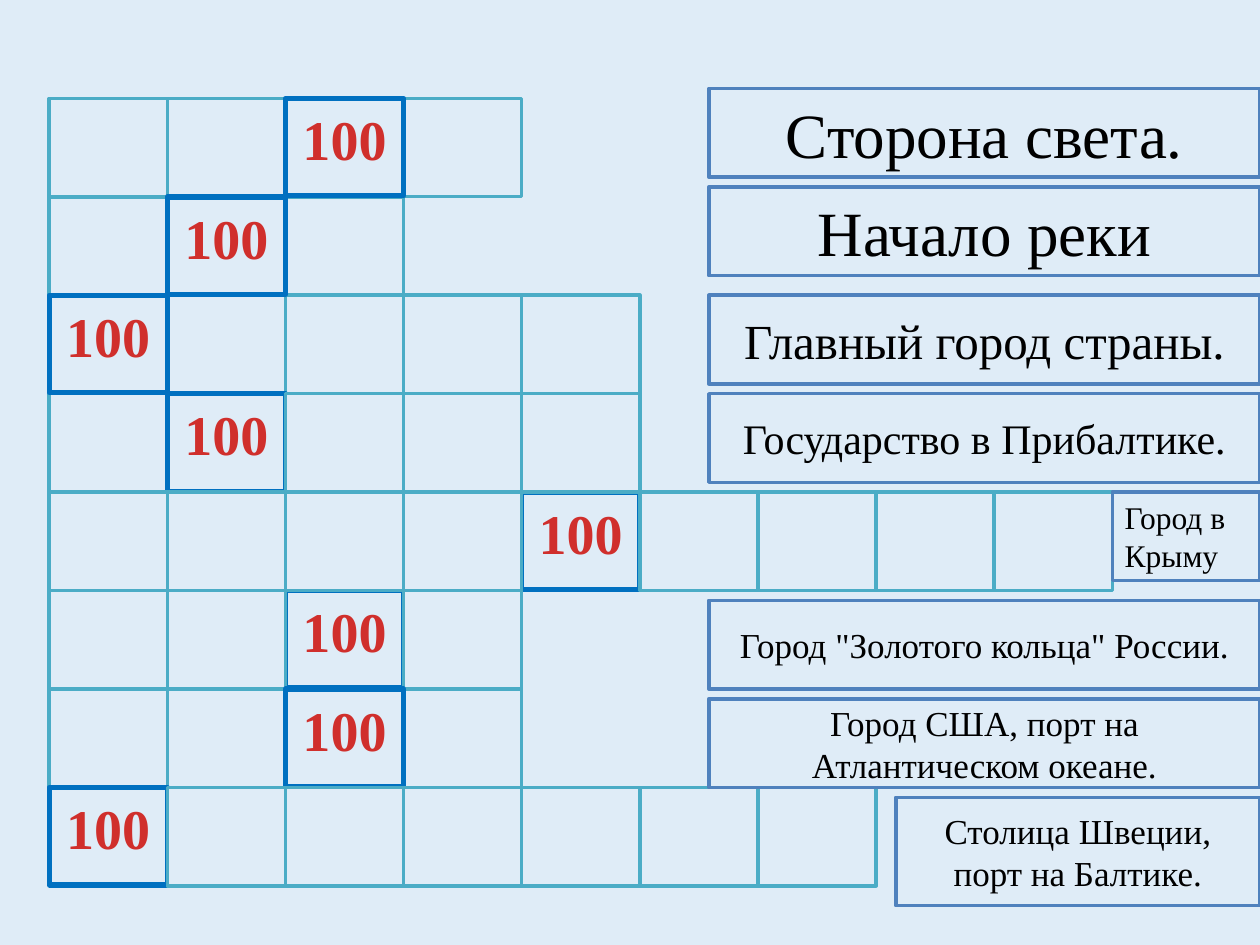
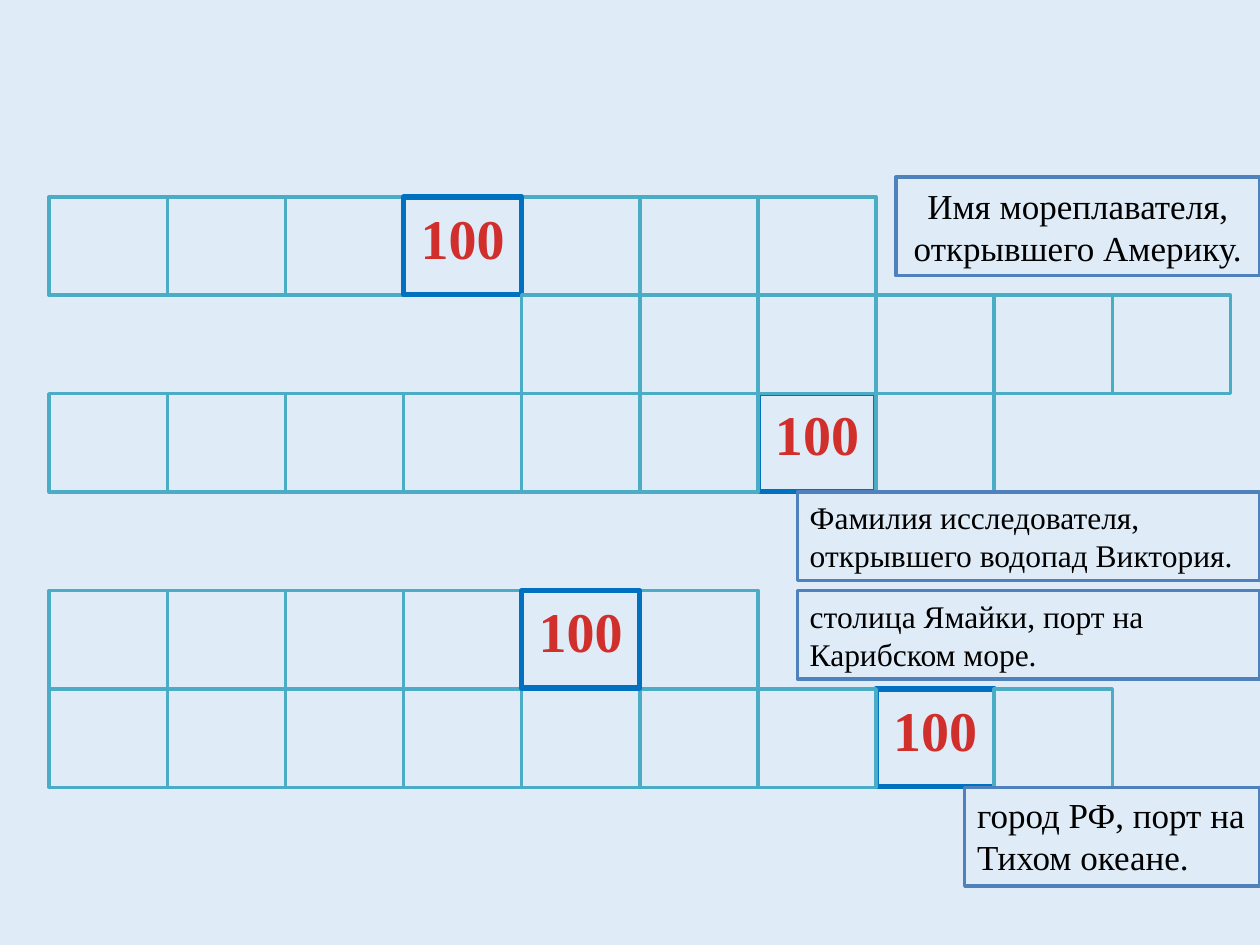
from lxml.etree import SubElement
from pptx import Presentation
from pptx.dml.color import RGBColor
from pptx.enum.shapes import MSO_SHAPE
from pptx.enum.text import MSO_ANCHOR as Anchor, PP_ALIGN as Align
from pptx.oxml.ns import qn
from pptx.util import Inches, Pt

WIDTH, HEIGHT = 10, 7.5
UNIT = WIDTH / 128          # every place and size is a count of units
LEFT, TOP = 5, 10           # corner of the crossword grid
CELL_W, CELL_H, PRIZE_H = 12, 10, 9.9
FONT = "Times New Roman"
PAPER, TEAL, BLUE, FRAME, INK = "DFECF7", "4BACC6", "0070C0", "4F81BD", "000000"
REDS = [(0, "FC7C7A"), (75, "D02F2C"), (100, "C70500")]
PRIZE = "100"

# layers, back to front: (text in the cells, {row: columns})
# clues: (left, top, height, size, centred, text); each runs to the right edge
SLIDES = [
    {
        "layers": [
            ("", {0: [0, 1, 3], 1: [0, 2], 2: [1, 2], 3: [0]}),
            (PRIZE, {0: [2], 1: [1], 2: [0], 3: [1], 4: [4], 5: [2]}),
            ("", {2: [3, 4], 3: [2, 3, 4], 4: [0, 1, 2, 3, 5, 6, 7, 8],
                  5: [0, 1, 3], 6: [0, 1, 3]}),
            (PRIZE, {6: [2], 7: [0]}),
            ("", {7: range(1, 7)}),
        ],
        "clues": [
            (72, 9, 9, 36, True, "Сторона света."),
            (72, 19, 9, 36, True, "Начало реки"),
            (72, 30, 9, 28, True, "Главный город страны."),
            (72, 40, 9, 24, True, "Государство в Прибалтике."),
            (72, 61, 9, 20, True, "Город \"Золотого кольца\" России."),
            (72, 71, 9, 20, True, "Город США, порт на Атлантическом океане."),
            (91, 81, 11, 20, True, "Столица Швеции, порт на Балтике."),
            (113, 50, 9, 18, False, "Город в Крыму"),
        ],
    },
    {
        "layers": [
            ("", {1: [0, 1, 2, 4, 5, 6], 3: [0, 1]}),
            (PRIZE, {1: [3], 6: [7], 3: [6]}),
            ("", {3: [2, 3, 4, 5, 7], 2: range(4, 10), 5: [0, 1, 2, 3, 5],
                  6: [0, 1, 2, 3, 4, 5, 6, 8]}),
            (PRIZE, {5: [4]}),
        ],
        "clues": [
            (91, 18, 10, 20, True, "Имя мореплавателя, открывшего Америку."),
            (81, 50, 9, 18, False,
             "Фамилия исследователя, открывшего водопад Виктория."),
            (81, 60, 9, 18, False, "столица Ямайки, порт на Карибском море."),
            (98, 80, 10, 20, False, "город РФ, порт на Тихом океане."),
        ],
    },
]


def paint(fill, color):
    fill.solid()
    fill.fore_color.rgb = RGBColor.from_string(color)


def add_box(slide, place, line, weight, filled=True):
    box = slide.shapes.add_shape(
        MSO_SHAPE.RECTANGLE, *(Inches(n * UNIT) for n in place))
    box.shadow.inherit = False
    if filled:
        paint(box.fill, PAPER)
    else:
        box.fill.background()
    paint(box.line.fill, line)
    box.line.width = Pt(weight)
    return box


def write(box, text, size, centred, anchor):
    frame = box.text_frame
    frame.text = text
    frame.word_wrap = True
    frame.vertical_anchor = anchor
    para = frame.paragraphs[0]
    para.alignment = Align.CENTER if centred else Align.LEFT
    font = para.runs[0].font
    font.name, font.size = FONT, Pt(size)
    paint(font.fill, INK)
    return para.runs[0]


def shade(run):
    """Give the run a bold vertical gradient of reds."""
    run.font.bold = True
    props = run.font._element
    solid = props.find(qn("a:solidFill"))
    grad = props.makeelement(qn("a:gradFill"))
    props.replace(solid, grad)
    stops = SubElement(grad, qn("a:gsLst"))
    for share, color in REDS:
        stop = SubElement(stops, qn("a:gs"), pos=str(share * 1000))
        SubElement(stop, qn("a:srgbClr"), val=color)
    SubElement(grad, qn("a:lin"), ang=str(90 * 60000))


def add_cell(slide, row, col, text):
    x, y = LEFT + col * CELL_W, TOP + row * CELL_H
    if text:
        box = add_box(slide, (x, y, CELL_W, PRIZE_H), BLUE, 3, filled=False)
        shade(write(box, text, 32, True, Anchor.TOP))
    else:
        add_box(slide, (x, y, CELL_W, CELL_H), TEAL, 2)


def add_clue(slide, left, top, height, size, centred, text):
    place = left, top, WIDTH / UNIT - left, height
    anchor = Anchor.MIDDLE if centred else Anchor.TOP
    write(add_box(slide, place, FRAME, 2), text, size, centred, anchor)


def main():
    deck = Presentation()
    deck.slide_width, deck.slide_height = Inches(WIDTH), Inches(HEIGHT)
    for content in SLIDES:
        slide = deck.slides.add_slide(deck.slide_layouts[6])
        paint(slide.background.fill, PAPER)
        for text, rows in content["layers"]:
            for row, cols in rows.items():
                for col in cols:
                    add_cell(slide, row, col, text)
        for clue in content["clues"]:
            add_clue(slide, *clue)
    deck.save("out.pptx")


if __name__ == "__main__":
    main()
